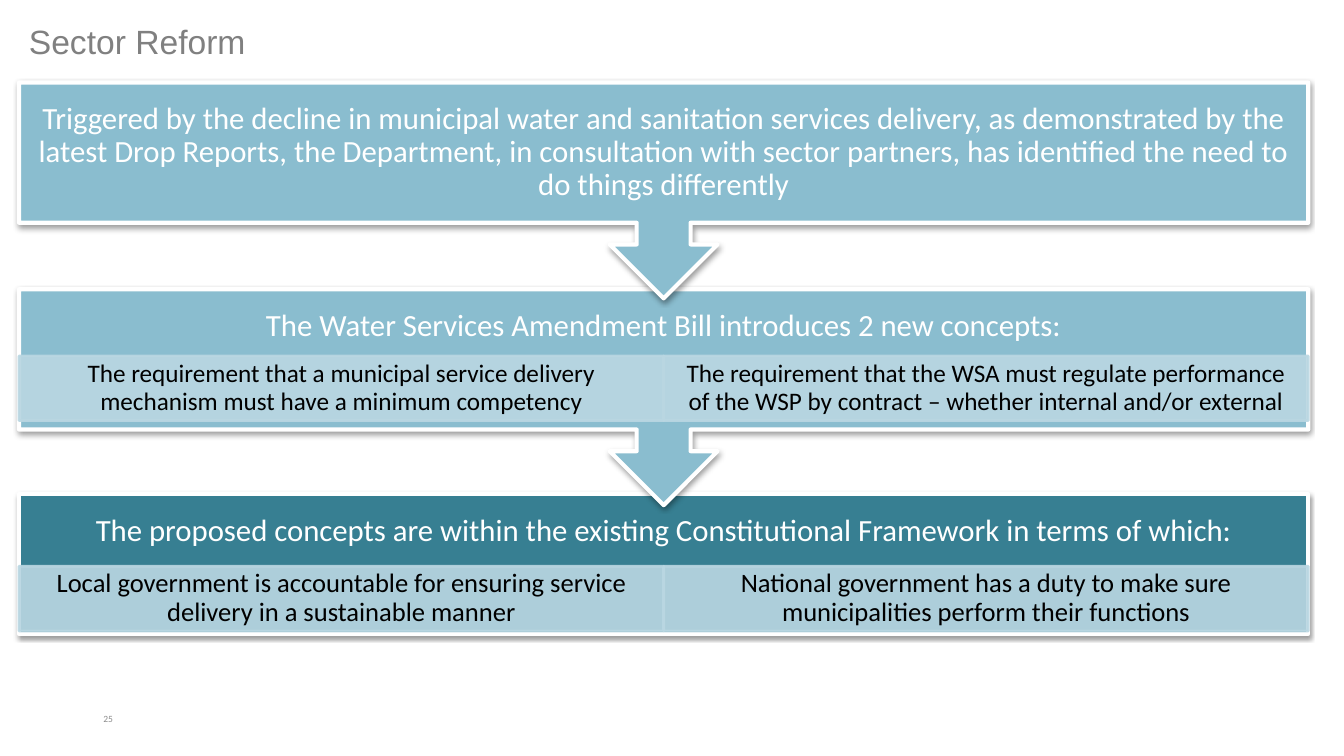
from lxml import etree
from pptx import Presentation
from pptx import util as u
from pptx.dml.color import RGBColor
from pptx.enum import shapes, text
from pptx.oxml import ns

WHITE = RGBColor(0xFF, 0xFF, 0xFF)
BLACK = RGBColor(0, 0, 0)
TITLE_GREY = RGBColor(0x80, 0x80, 0x80)
NUMBER_GREY = RGBColor(0x8C, 0x8C, 0x8C)
TEAL = RGBColor(0x37, 0x7F, 0x92)
SKY = RGBColor(0x8A, 0xBD, 0xCF)
PALE = RGBColor(0xBA, 0xD7, 0xE2)

LEFT, WIDTH = 0.48, 32.49
BOX_HEIGHT, CALLOUT_HEIGHT, HEADING_HEIGHT, CELL_HEIGHT = 3.53, 5.44, 1.9, 1.63

# Steps: top, colour, heading, cell top, cell text size, cell texts
STEPS = [
    (2.08, SKY, "Triggered by the decline in municipal water and sanitation services "
     "delivery, as demonstrated by the latest Drop Reports, the Department, in consultation "
     "with sector partners, has identified the need to do things differently", None, None, []),
    (7.29, SKY, "The Water Services Amendment Bill introduces 2 new concepts:", 8.97, 18,
     ["The requirement that a municipal service delivery mechanism must have a minimum "
      "competency",
      "The requirement that the WSA must regulate performance of the WSP by contract – "
      "whether internal and/or external"]),
    (12.45, TEAL, "The proposed concepts are within the existing Constitutional Framework "
     "in terms of which:", 14.27, 19,
     ["Local government is accountable for ensuring service delivery in a sustainable manner",
      "National government has a duty to make sure municipalities perform their functions"]),
]


class SlideBuilder:
    """Holds the text style and the slide being filled."""

    font_name = "Calibri"
    line_spacing = 0.9

    def __init__(self, slide):
        self.slide = slide

    def set_text(self, shape, words, size, color, align, anchor, insets, font_name=None):
        frame = shape.text_frame
        frame.word_wrap = True
        frame.vertical_anchor = anchor
        frame.margin_left = frame.margin_right = u.Cm(insets[0])
        frame.margin_top = frame.margin_bottom = u.Cm(insets[1])
        frame.text = words
        paragraph = frame.paragraphs[0]
        paragraph.alignment = align
        paragraph.line_spacing = self.line_spacing
        font = paragraph.runs[0].font
        font.name = font_name or self.font_name
        font.size = u.Pt(size)
        font.color.rgb = color

    def label(self, box, words, size, color, align=text.PP_ALIGN.CENTER,
              anchor=text.MSO_ANCHOR.MIDDLE, insets=(0.43, 0.43), font_name=None):
        shape = self.slide.shapes.add_textbox(*map(u.Cm, box))
        self.set_text(shape, words, size, color, align, anchor, insets, font_name)

    def block(self, preset, box, fill, line, line_width):
        shape = self.slide.shapes.add_shape(preset, *map(u.Cm, box))
        shape.shadow.inherit = False
        shape.fill.solid()
        shape.fill.fore_color.rgb = fill
        shape.line.color.rgb = line
        shape.line.width = u.Pt(line_width)
        return shape

    def panel(self, preset, box, fill):
        shape = self.block(preset, box, fill, WHITE, 3)
        effects = shape.element.spPr.find(ns.qn("a:effectLst"))
        shadow = etree.SubElement(
            effects, ns.qn("a:outerShdw"), blurRad=str(u.Pt(3.1)), dist=str(u.Pt(1.6)),
            dir="5400000", rotWithShape="0")
        color = etree.SubElement(shadow, ns.qn("a:srgbClr"), val=str(BLACK))
        etree.SubElement(color, ns.qn("a:alpha"), val="38000")

    def cell(self, box, words, size):
        shape = self.block(shapes.MSO_SHAPE.RECTANGLE, box, PALE, PALE, 2)
        for color in shape.element.spPr.iter(ns.qn("a:srgbClr")):
            etree.SubElement(color, ns.qn("a:alpha"), val="90000")
        self.set_text(shape, words, size, BLACK, text.PP_ALIGN.CENTER,
                      text.MSO_ANCHOR.MIDDLE, (0.37, 0.08))


def main():
    presentation = Presentation()
    presentation.slide_width = u.Cm(33.87)
    presentation.slide_height = u.Cm(19.05)
    builder = SlideBuilder(presentation.slides.add_slide(presentation.slide_layouts[6]))

    # Title and slide number
    builder.label((LEFT, 0.36, 27.46, 1.5), "Sector Reform", 24, TITLE_GREY,
                  text.PP_ALIGN.LEFT, insets=(0.25, 0.13), font_name="Arial")
    builder.label((0.28, 17.86, 2.82, 1.02), "25", 6.8, NUMBER_GREY,
                  text.PP_ALIGN.RIGHT, text.MSO_ANCHOR.TOP, (0.25, 0.13))

    # Steps from last to first, so each arrow tip overlaps the step below
    for step in reversed(STEPS):
        top, color, heading, cell_top, cell_size, cells = step
        if step is STEPS[-1]:
            preset, height = shapes.MSO_SHAPE.RECTANGLE, BOX_HEIGHT
        else:
            preset, height = shapes.MSO_SHAPE.DOWN_ARROW_CALLOUT, CALLOUT_HEIGHT
        builder.panel(preset, (LEFT, top, WIDTH, height), color)
        heading_height = HEADING_HEIGHT if cells else BOX_HEIGHT
        builder.label((LEFT, top, WIDTH, heading_height), heading, 22, WHITE)
        for column, words in enumerate(cells):
            width = WIDTH / len(cells)
            builder.cell((LEFT + column * width, cell_top, width, CELL_HEIGHT),
                         words, cell_size)

    presentation.save("out.pptx")


if __name__ == "__main__":
    main()
